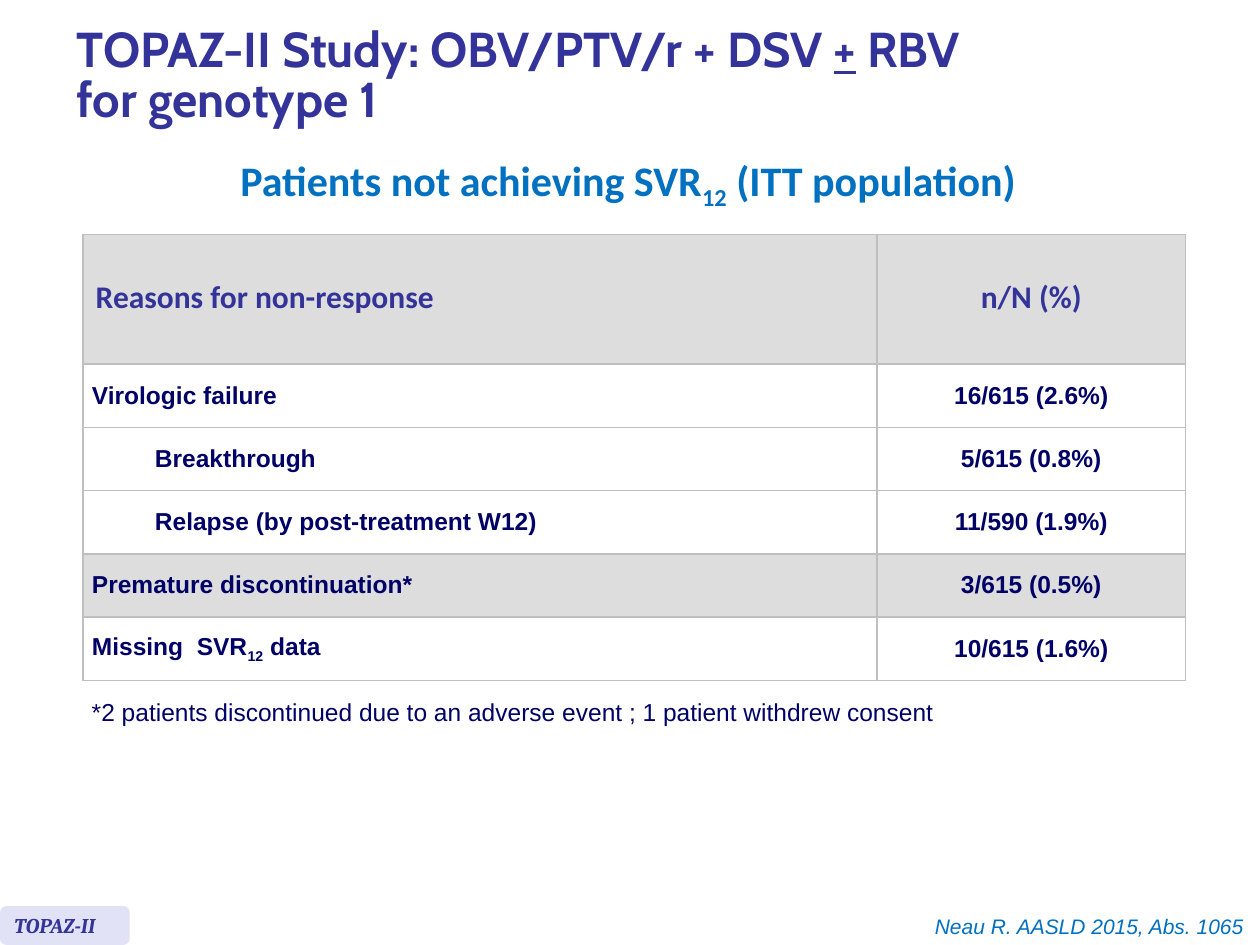
from pptx import Presentation
from pptx.dml.color import RGBColor
from pptx.enum.shapes import MSO_SHAPE
from pptx.enum.text import MSO_ANCHOR, PP_ALIGN
from pptx.oxml import parse_xml
from pptx.oxml.ns import nsdecls
from pptx.util import Inches, Pt

INDIGO, BLUE, NAVY = "333399", "0070C0", "000066"
GREY, WHITE, BORDER, LAVENDER = "DDDDDD", "FFFFFF", "BFBFBF", "E2E2F6"

deck = Presentation()
deck.slide_width, deck.slide_height = Inches(10), Inches(7.5)
slide = deck.slides.add_slide(deck.slide_layouts[6])
COL, ROW = deck.slide_width / 100, deck.slide_height / 75


def place(left, top, width, height):
    """Turn grid columns and rows into a position and size."""
    return int(left * COL), int(top * ROW), int(width * COL), int(height * ROW)


def write(frame, *pieces, font, size, color, bold=False, italic=False,
          align=PP_ALIGN.LEFT, anchor=MSO_ANCHOR.TOP, wrap=True,
          spacing=None, indent=0, after=0):
    """Write pieces: plain text, a line break, or (text, "sub" | "under")."""
    frame.word_wrap = wrap
    frame.vertical_anchor = anchor
    paragraph = frame.paragraphs[0]
    paragraph.alignment = align
    paragraph.line_spacing = spacing
    paragraph.space_after = Pt(after)
    if indent:
        paragraph._p.get_or_add_pPr().set("marL", str(int(indent * COL)))
    for piece in pieces:
        if piece == "\n":
            paragraph.add_line_break()
            continue
        text, mark = (piece, None) if isinstance(piece, str) else piece
        run = paragraph.add_run()
        run.text = text
        run.font.name, run.font.size = font, Pt(size)
        run.font.bold, run.font.italic = bold, italic
        run.font.color.rgb = RGBColor.from_string(color)
        if mark == "under":
            run.font.underline = True
        elif mark == "sub":
            run.font._element.set("baseline", "-25000")


# Title and subtitle
title = slide.shapes.add_textbox(*place(5.1, 0.8, 91.3, 10.7))
write(title.text_frame, "TOPAZ-II Study: OBV/PTV/r + DSV ", ("+", "under"), " RBV ",
      "\n", "for genotype 1", font="Cabin", size=28, color=INDIGO, bold=True,
      anchor=MSO_ANCHOR.MIDDLE, spacing=0.85)

subtitle = slide.shapes.add_textbox(*place(17.6, 14, 64.5, 3.5))
write(subtitle.text_frame, "Patients not achieving SVR", ("12", "sub"),
      " (ITT population)", font="Calibri", size=24, color=BLUE, bold=True,
      align=PP_ALIGN.CENTER, anchor=MSO_ANCHOR.MIDDLE, wrap=False, spacing=Pt(15.2))

# Table of reasons: label pieces, count, indent, fill
reasons = [
    (["Reasons for non-response"], "n/N (%)", 0, GREY),
    (["Virologic failure"], "16/615 (2.6%)", 0, WHITE),
    (["Breakthrough"], "5/615 (0.8%)", 5, WHITE),
    (["Relapse (by post-treatment W12)"], "11/590 (1.9%)", 5, WHITE),
    (["Premature discontinuation*"], "3/615 (0.5%)", 0, GREY),
    (["Missing  SVR", ("12", "sub"), " data"], "10/615 (1.6%)", 0, WHITE),
]
header_style = dict(font="Calibri", size=18, color=INDIGO, spacing=0.8)
body_style = dict(font="Arial", size=14, color=NAVY)

table = slide.shapes.add_table(len(reasons), 2, *place(6.6, 18.6, 87.5, 35.4)).table
table.first_row = table.horz_banding = False
table.columns[0].width, table.columns[1].width = int(63 * COL), int(24.5 * COL)

for index, (label, count, indent, fill) in enumerate(reasons):
    is_header = index == 0
    table.rows[index].height = int((10.3 if is_header else 5.02) * ROW)
    style = header_style if is_header else body_style
    for column, pieces in enumerate((label, [count])):
        cell = table.cell(index, column)
        cell.margin_left = cell.margin_right = int((1 if is_header else 0.7) * COL)
        cell.margin_top = cell.margin_bottom = 0
        write(cell.text_frame, *pieces, bold=True, **style,
              indent=0 if column else indent,
              align=PP_ALIGN.CENTER if column else PP_ALIGN.LEFT)
        cell.vertical_anchor = MSO_ANCHOR.MIDDLE
        for side in ("lnL", "lnR", "lnT", "lnB"):
            cell._tc.get_or_add_tcPr().append(parse_xml(
                f'<a:{side} {nsdecls("a")} w="{Pt(1)}"><a:solidFill>'
                f'<a:srgbClr val="{BORDER}"/></a:solidFill></a:{side}>'))
        cell.fill.solid()
        cell.fill.fore_color.rgb = RGBColor.from_string(fill)

# Footnote
footnote = slide.shapes.add_textbox(*place(6.3, 54.8, 69.4, 3.4))
write(footnote.text_frame,
      "*2 patients discontinued due to an adverse event ; 1 patient withdrew consent",
      wrap=False, **body_style)

# Study tag and citation
tag = slide.shapes.add_shape(MSO_SHAPE.ROUNDED_RECTANGLE, *place(0, 71.9, 10.3, 3.1))
tag.shadow.inherit = False
tag.fill.solid()
tag.fill.fore_color.rgb = RGBColor.from_string(LAVENDER)
tag.line.fill.background()
write(tag.text_frame, "TOPAZ-II", font="Cambria", size=12, color=INDIGO, bold=True,
      italic=True, anchor=MSO_ANCHOR.MIDDLE, wrap=False)

citation = slide.shapes.add_textbox(*place(60.4, 72, 39.3, 3))
write(citation.text_frame, "Neau R. AASLD 2015, Abs. 1065", font="Arial", size=12,
      color=BLUE, italic=True, align=PP_ALIGN.RIGHT)

deck.save("out.pptx")
